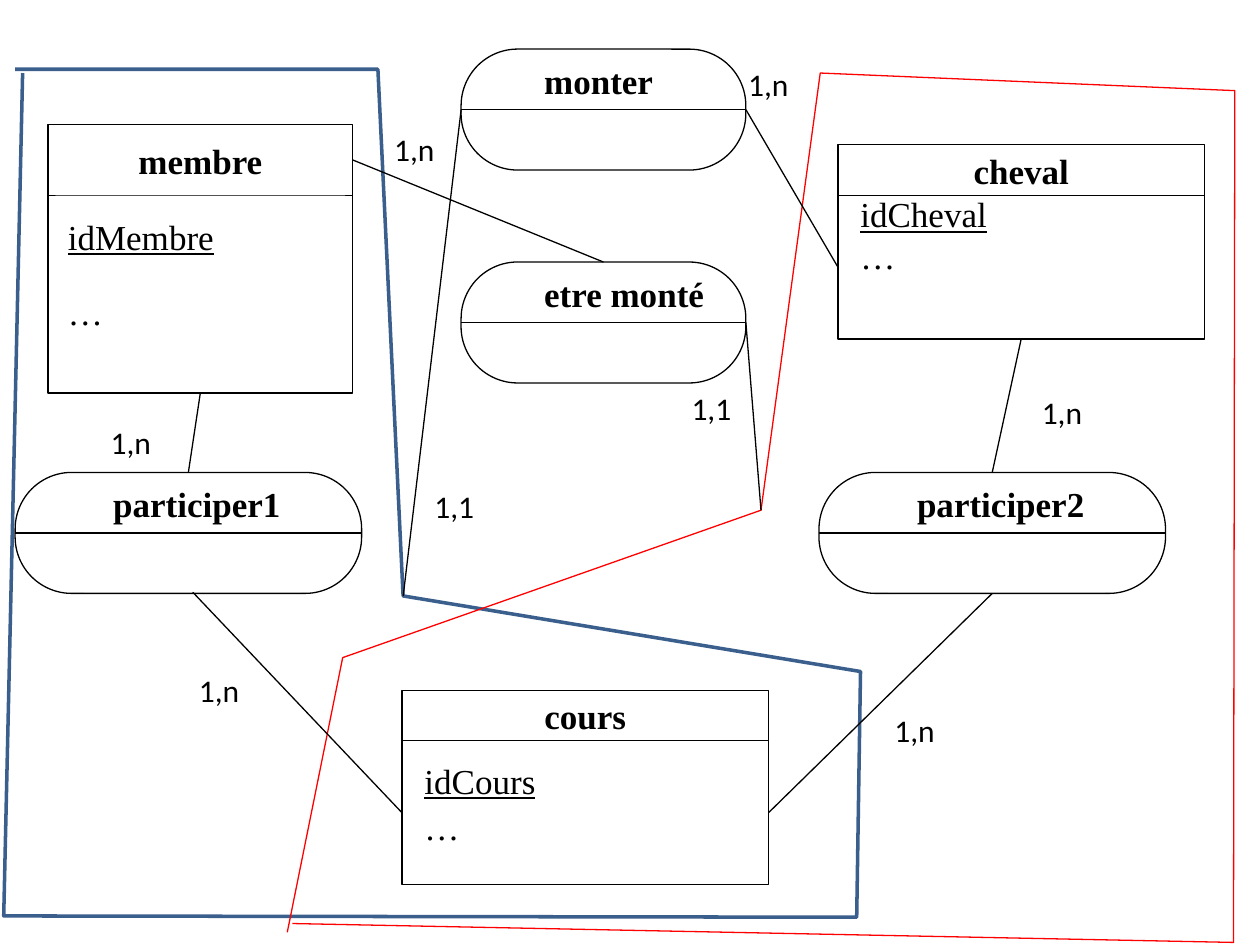
"""Build the riding-club entity diagram: entities, associations, links and two outlines."""
from lxml import etree
from pptx import Presentation
from pptx import util as u
from pptx.dml.color import RGBColor
from pptx.enum import shapes, text
from pptx.oxml.ns import qn

COLORS = {"white": "FFFFFF", "black": "000000", "blue": "3A5F8C", "red": "FF0000"}
TOP, LEFT, BOTTOM, RIGHT = range(4)

deck = Presentation()
deck.slide_width, deck.slide_height = u.Inches(10), u.Inches(7.5)
page = deck.slides.add_slide(deck.slide_layouts[6])


def add_box(parent, at, words=(), outlined=False, clear=False, bold=False,
            underline=False, center=False, kind=shapes.MSO_SHAPE.RECTANGLE):
    """Add a white shape whose words fill one paragraph each."""
    box = parent.add_shape(kind, *(u.Inches(length) for length in at))
    box.shadow.inherit = False
    box.fill.solid()
    box.fill.fore_color.rgb = RGBColor.from_string(COLORS["white"])
    if clear:
        shade = box.fill._xPr.find(qn("a:solidFill"))[0]
        etree.SubElement(shade, qn("a:alpha")).set("val", "50000")
    if outlined:
        box.line.color.rgb = RGBColor.from_string(COLORS["black"])
        box.line.width = u.Pt(0.75)
    else:
        box.line.fill.background()
    frame = box.text_frame
    frame.word_wrap = False
    frame.vertical_anchor = text.MSO_ANCHOR.MIDDLE
    for index, word in enumerate(words):
        para = frame.add_paragraph() if index else frame.paragraphs[0]
        para.alignment = text.PP_ALIGN.CENTER if center else text.PP_ALIGN.LEFT
        span = para.add_run()
        span.text = word
        span.font.name, span.font.size = "Times New Roman", u.Pt(20)
        span.font.bold = bold
        span.font.underline = underline and word != "…"
        span.font.color.rgb = RGBColor.from_string(COLORS["black"])
    return box


def add_line(parent, start, end):
    """Add a thin black line between two points."""
    line = parent.add_connector(shapes.MSO_CONNECTOR.STRAIGHT,
                                *(u.Inches(length) for length in (*start, *end)))
    line.line.color.rgb = RGBColor.from_string(COLORS["black"])
    line.line.width = u.Pt(0.75)
    etree.SubElement(line._element.spPr, qn("a:effectLst"))
    return line


entities = [
    ("cours", 3.19, 5.48, 2.91, 0.4, 1.14, 0.08,
     [(["idCours"], 5.96, 0.47), (["…"], 6.49, 0.47)]),
    ("membre", 0.38, 0.99, 2.42, 0.56, 1.57, 0.06,
     [(["idMembre"], 1.55, 0.65), (["…"], 2.2, 0.54)]),
    ("cheval", 6.65, 1.15, 2.91, 0.4, 1.14, 0.08,
     [(["idCheval", "…"], 1.63, 0.47)]),
]
parts = {}
for name, left, top, width, head, body, inset, fields in entities:
    group = page.shapes.add_group_shape().shapes
    parts[name, "body"] = add_box(group, (left, top + head, width, body),
                                  outlined=True, clear=True)
    parts[name, "head"] = add_box(group, (left, top, width, head), [name],
                                  outlined=True, clear=True, bold=True, center=True)
    for words, field_top, height in fields:
        field = add_box(group, (left + inset, field_top, width - 2 * inset, height),
                        words, clear=True, underline=True)
        if name == "cours" and words == ["…"]:
            field.text_frame.margin_top = 0
            field.text_frame.margin_bottom = u.Inches(0.33)

associations = [
    ("monter", 3.66, 0.39, 2.26, 0.56, 1.1, 0.45, 1.41),
    ("participer2", 6.5, 3.75, 2.75, 0.68, 1.54, 0.55, 1.72),
    ("participer1", 0.12, 3.75, 2.75, 0.68, 1.54, 0.55, 1.72),
    ("etre monté", 3.66, 2.08, 2.26, 0.56, 1.48, 0.45, 1.41),
]
for name, left, top, width, title_inset, title_width, foot_inset, foot_width in associations:
    group = page.shapes.add_group_shape().shapes
    oval = add_box(group, (left, top, width, 0.96), outlined=True,
                   kind=shapes.MSO_SHAPE.ROUNDED_RECTANGLE)
    oval.adjustments[0] = 0.467
    divider = add_line(group, (left, top + 0.48), (left + width, top + 0.48))
    divider.begin_connect(oval, LEFT)
    divider.end_connect(oval, RIGHT)
    title = add_box(group, (left + title_inset, top + 0.03, title_width, 0.44),
                    [name], bold=True)
    title.fill.background()
    title.text_frame.vertical_anchor = text.MSO_ANCHOR.TOP
    title.text_frame.auto_size = text.MSO_AUTO_SIZE.SHAPE_TO_FIT_TEXT
    parts[name, "oval"] = oval
    parts[name, "foot"] = add_box(group, (left + foot_inset, top + 0.51, foot_width, 0.44))

outlines = [
    ("blue", 2, [(0.12, 0.55), (3, 0.55), (3.2, 4.73), (6.83, 5.33),
                 (6.8, 7.28), (0.03, 7.27), (0.18, 0.58)]),
    ("red", 0.75, [(2.28, 7.4), (2.72, 5.22), (6.04, 4.05), (6.51, 0.58),
                   (9.8, 0.72), (9.79, 7.48), (2.32, 7.33)]),
]
for color, weight, corners in outlines:
    points = [(u.Inches(x), u.Inches(y)) for x, y in corners]
    builder = page.shapes.build_freeform(*points[0])
    builder.add_line_segments(points[1:], close=False)
    outline = builder.convert_to_shape()
    outline.shadow.inherit = False
    outline.fill.background()
    outline.line.color.rgb = RGBColor.from_string(COLORS[color])
    outline.line.width = u.Pt(weight)

links = [
    ((3.2, 4.73), None, (3.66, 0.87), ("monter", "oval", LEFT)),
    ((6.65, 2.12), ("cheval", "body", LEFT), (5.92, 0.87), ("monter", "oval", RIGHT)),
    ((1.59, 3.12), ("membre", "body", BOTTOM), (1.49, 3.75), ("participer1", "oval", TOP)),
    ((1.53, 4.71), ("participer1", "foot", BOTTOM), (3.19, 6.46), ("cours", "body", LEFT)),
    ((8.11, 2.69), ("cheval", "body", BOTTOM), (7.88, 3.75), ("participer2", "oval", TOP)),
    ((7.88, 4.71), ("participer2", "oval", BOTTOM), (6.1, 6.46), ("cours", "body", RIGHT)),
    ((6.04, 4.05), None, (5.92, 2.56), ("etre monté", "oval", RIGHT)),
    ((4.79, 2.08), ("etre monté", "oval", TOP), (2.8, 1.27), ("membre", "head", RIGHT)),
]
for start, source, end, target in links:
    link = add_line(page.shapes, start, end)
    if source:
        link.begin_connect(parts[source[:2]], source[2])
    link.end_connect(parts[target[:2]], target[2])

cardinalities = [
    ("1,n", 0.78, 3.31), ("1,n", 8.17, 3.07), ("1,n", 1.48, 5.28), ("1,n", 7, 5.59),
    ("1,1", 5.39, 3.04), ("1,1", 3.35, 3.82), ("1,n", 5.84, 0.47), ("1,n", 3.03, 0.98),
]
for words, left, top in cardinalities:
    label = page.shapes.add_textbox(u.Inches(left), u.Inches(top), u.Inches(0.53), u.Inches(0.4))
    label.text_frame.word_wrap = False
    label.text_frame.auto_size = text.MSO_AUTO_SIZE.SHAPE_TO_FIT_TEXT
    span = label.text_frame.paragraphs[0].add_run()
    span.text = words
    span.font.name, span.font.size = "Calibri", u.Pt(18)
    span.font.color.rgb = RGBColor.from_string(COLORS["black"])

deck.save("out.pptx")
